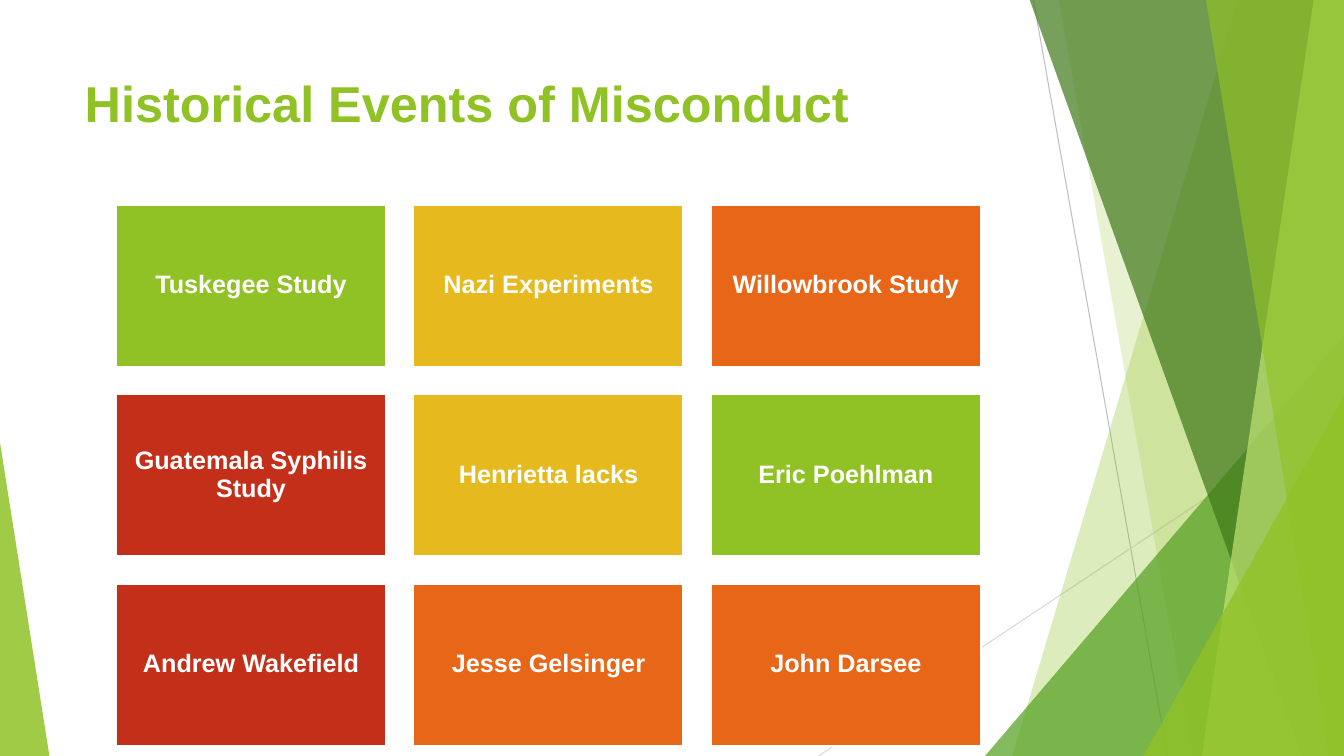
from dataclasses import dataclass

from lxml.etree import SubElement
from pptx import Presentation
from pptx.dml.color import RGBColor
from pptx.enum.shapes import MSO_CONNECTOR, MSO_SHAPE
from pptx.enum.text import MSO_ANCHOR, MSO_AUTO_SIZE, PP_ALIGN
from pptx.oxml.ns import qn
from pptx.util import Inches, Pt

WIDE, HIGH = 13.33, 7.5
GREEN, GOLD, ORANGE, RED = "90C226", "E6B91E", "E76618", "C42F1A"
WHITE = "FFFFFF"


@dataclass
class Ray:
    start: tuple[float, float]
    end: tuple[float, float]
    color: str


@dataclass
class Band:
    top: float
    base: float
    color: str
    alpha: int


@dataclass
class Wedge:
    left: float
    top: float
    width: float
    peak: float
    color: str
    alpha: int


@dataclass
class Tile:
    text: str
    color: str


RAYS = [
    Ray((10.25, 0), (11.58, HIGH), "BFBFBF"),
    Ray((WIDE, 4.03), (8.12, HIGH), "D9D9D9"),
]
DECOR = [
    Band(12.28, 10.04, GREEN, 30),
    Band(10.5, 11.83, GREEN, 20),
    Wedge(9.77, 3.33, 3.56, 1, "54A021", 72),
    Band(10.21, 12.91, "3F7819", 70),
    Band(13.03, 11.92, "C0E474", 70),
    Band(11.96, 13.18, GREEN, 65),
    Wedge(11.34, 3.93, 1.99, 1, GREEN, 80),
    Wedge(0, 4.39, 0.49, 0, GREEN, 85),
]
TILES = [
    Tile("Tuskegee Study", GREEN),
    Tile("Nazi Experiments", GOLD),
    Tile("Willowbrook Study", ORANGE),
    Tile("Guatemala Syphilis Study", RED),
    Tile("Henrietta lacks", GOLD),
    Tile("Eric Poehlman", GREEN),
    Tile("Andrew Wakefield", RED),
    Tile("Jesse Gelsinger", ORANGE),
    Tile("John Darsee", ORANGE),
]


def rgb(color: str) -> RGBColor:
    return RGBColor.from_string(color)


def write(shape, text: str, *, size: float, color: str, align=PP_ALIGN.LEFT,
          anchor=MSO_ANCHOR.TOP, inset=(0.1, 0.05), space: float = 1) -> None:
    frame = shape.text_frame
    frame.word_wrap = True
    frame.auto_size = MSO_AUTO_SIZE.NONE
    frame.vertical_anchor = anchor
    frame.margin_left = frame.margin_right = Inches(inset[0])
    frame.margin_top = frame.margin_bottom = Inches(inset[1])
    para = frame.paragraphs[0]
    para.alignment = align
    para.line_spacing = space
    run = para.add_run()
    run.text = text
    run.font.name = "Arial"
    run.font.size = Pt(size)
    run.font.bold = True
    run.font.color.rgb = rgb(color)


def paint(shape, color: str, alpha: int = 100) -> None:
    shape.shadow.inherit = False
    shape.fill.solid()
    shape.fill.fore_color.rgb = rgb(color)
    if alpha < 100:
        tint = shape.element.spPr.find(".//" + qn("a:srgbClr"))
        SubElement(tint, qn("a:alpha"), val=str(alpha * 1000))
    shape.line.fill.background()


def draw_ray(slide, ray: Ray) -> None:
    ends = [Inches(n) for n in ray.start + ray.end]
    line = slide.shapes.add_connector(MSO_CONNECTOR.STRAIGHT, *ends)
    line.line.color.rgb = rgb(ray.color)
    line.line.width = Pt(0.75)
    SubElement(line.element.spPr, qn("a:effectLst"))


def draw_band(slide, band: Band) -> None:
    top = Inches(-0.01)
    edge, foot = Inches(WIDE), Inches(HIGH)
    pen = slide.shapes.build_freeform(Inches(band.top), top)
    pen.add_line_segments([(edge, top), (edge, foot), (Inches(band.base), foot)])
    paint(pen.convert_to_shape(), band.color, band.alpha)


def draw_wedge(slide, wedge: Wedge) -> None:
    shape = slide.shapes.add_shape(
        MSO_SHAPE.ISOSCELES_TRIANGLE, Inches(wedge.left), Inches(wedge.top),
        Inches(wedge.width), Inches(HIGH - wedge.top))
    shape.adjustments[0] = wedge.peak
    paint(shape, wedge.color, wedge.alpha)


def draw_tile(slide, tile: Tile, row: int, col: int) -> None:
    wide, high, gap = 2.68, 1.61, 0.27
    shape = slide.shapes.add_shape(
        MSO_SHAPE.RECTANGLE, Inches(1.15 + col * (wide + gap)),
        Inches(2.03 + row * (high + gap)), Inches(wide), Inches(high))
    paint(shape, tile.color)
    shape.line.color.rgb = rgb(WHITE)
    shape.line.width = Pt(1.5)
    write(shape, tile.text, size=18, color=WHITE, align=PP_ALIGN.CENTER,
          anchor=MSO_ANCHOR.MIDDLE, inset=(0.07, 0.07), space=0.9)


def main() -> None:
    deck = Presentation()
    deck.slide_width, deck.slide_height = Inches(WIDE), Inches(HIGH)
    slide = deck.slides.add_slide(deck.slide_layouts[5])
    for ray in RAYS:
        draw_ray(slide, ray)
    for part in DECOR:
        if isinstance(part, Band):
            draw_band(slide, part)
        else:
            draw_wedge(slide, part)
    title = slide.shapes.title
    title.left, title.top = Inches(0.74), Inches(0.67)
    title.width, title.height = Inches(9.4), Inches(1.08)
    write(title, "Historical Events of Misconduct", size=36, color=GREEN)
    for index, tile in enumerate(TILES):
        draw_tile(slide, tile, *divmod(index, 3))
    deck.save("out.pptx")


if __name__ == "__main__":
    main()
